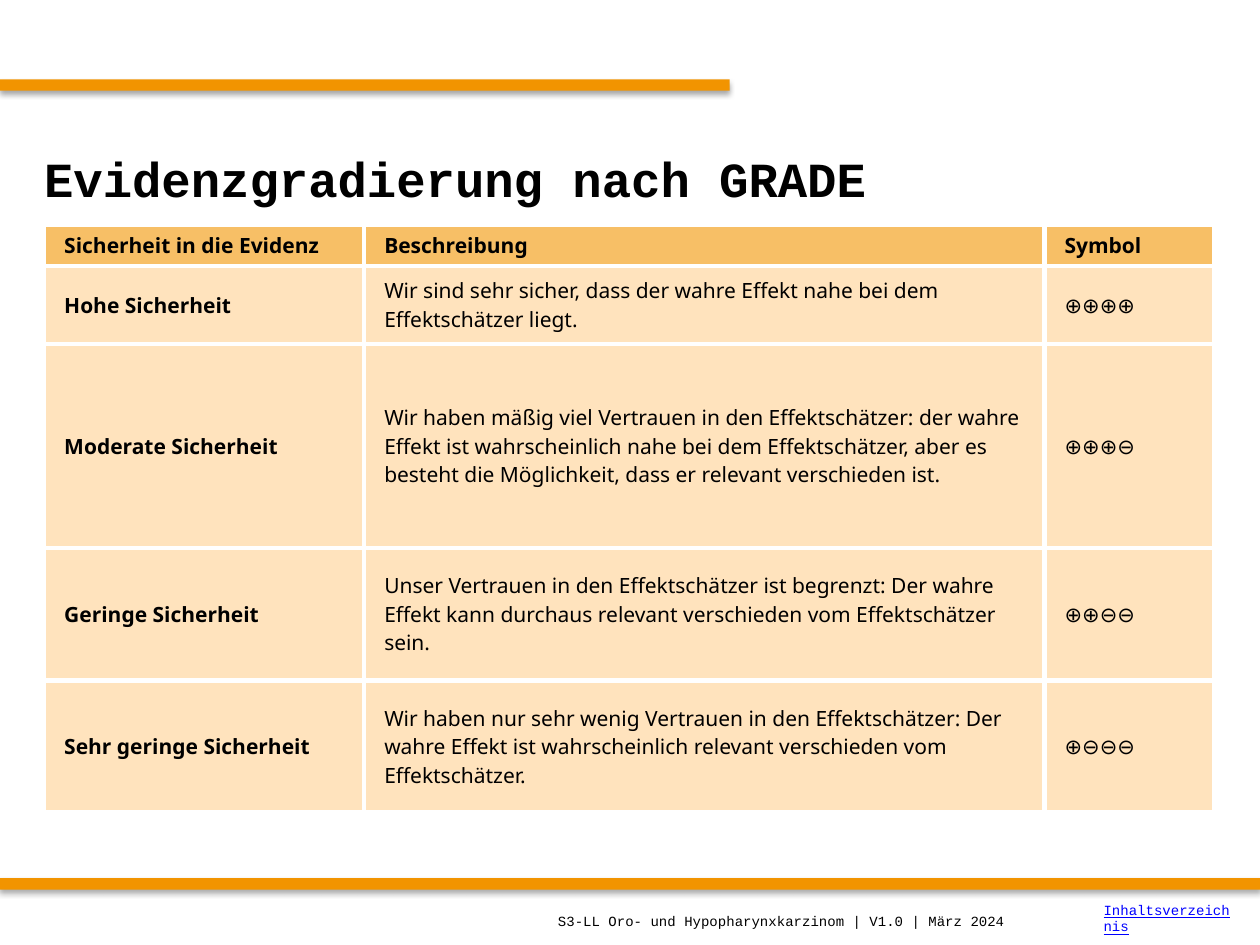
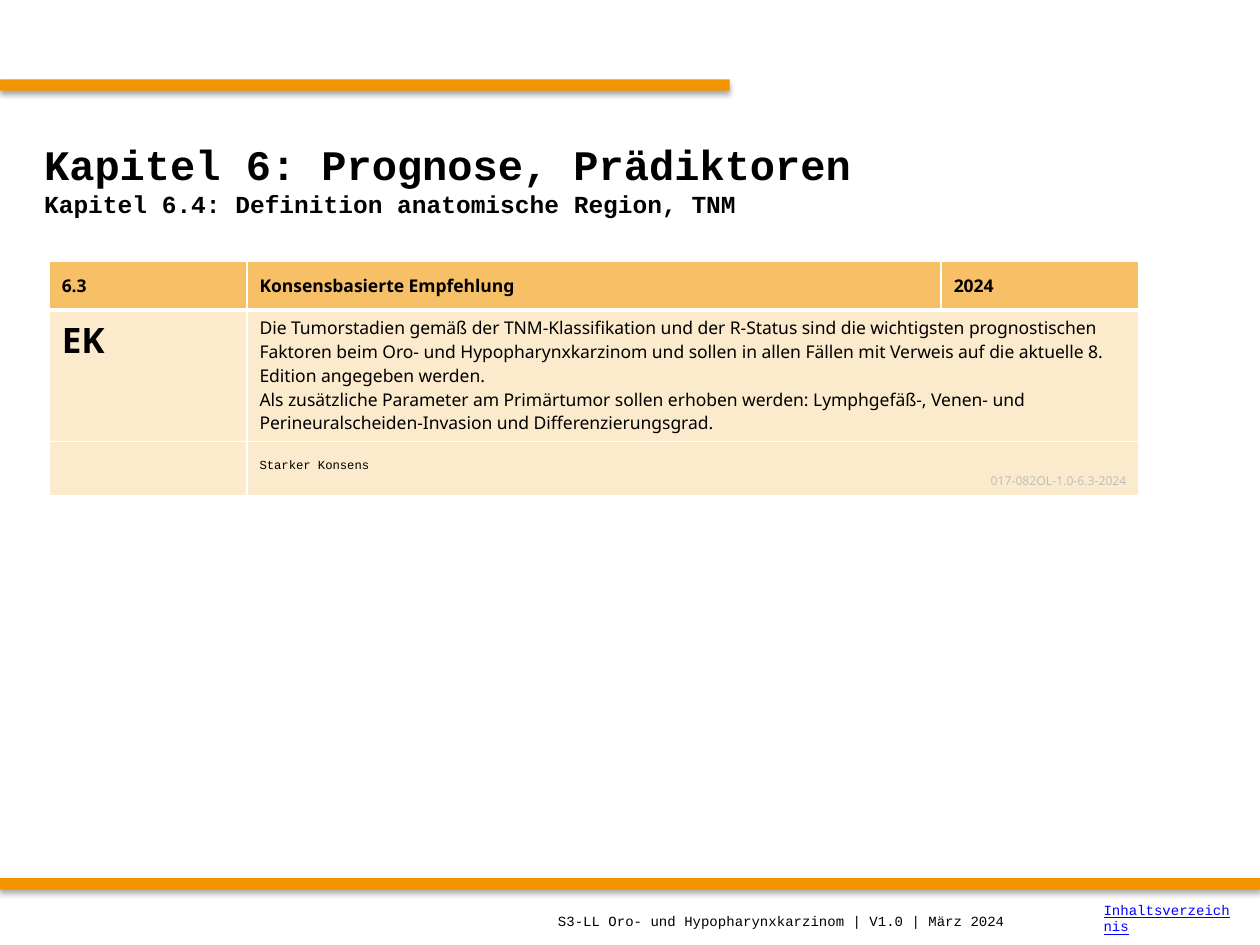
"""Build two guideline slides: evidence grading and a consensus recommendation."""
from dataclasses import dataclass

import lxml.etree
import pptx
import pptx.dml.color
import pptx.enum.shapes
import pptx.enum.text
import pptx.oxml
import pptx.oxml.ns
import pptx.util

Inches = pptx.util.Inches
Anchor = pptx.enum.text.MSO_ANCHOR
Align = pptx.enum.text.PP_ALIGN


@dataclass(frozen=True)
class Theme:
    orange: str = "F29400"
    header: str = "F7BF66"
    grade_body: str = "FFE3BD"
    consensus_body: str = "FCEACC"
    ink: str = "000000"
    link: str = "0000FF"
    faint: str = "BFBFBF"
    white: str = "FFFFFF"
    mono: str = "Courier New"
    sans: str = "Noto Sans"
    title: int = 28
    chapter: int = 24
    section: int = 14
    grade: int = 12
    mark: int = 20
    body: int = 10
    footer: int = 8
    note: int = 7


THEME = Theme()
WIDTH, HEIGHT = 10, 7.5
BANDS = [(0, 0.63, 5.79, 0.09), (0, 6.97, WIDTH, 0.09)]
TITLE_BOX = (0.25, 0.83, 9.5, 1.17)
FOOTERS = [
    ("S3-LL Oro- und Hypopharynxkarzinom | V1.0 | März 2024", (4.33, 7.11, 5.51, 0.39), {}),
    ("Inhaltsverzeichnis", (8.66, 7.09, 1.22, 0.39), {"color": THEME.link, "underline": True}),
]

GRADE_TITLE = [("Evidenzgradierung nach GRADE", THEME.title)]
GRADE_COLUMNS = [2.54, 5.4, 1.35]
GRADE_HEIGHTS = [0.33, 0.62, 1.62, 1.05, 1.05]
GRADE_ROWS = [
    ("Sicherheit in die Evidenz", "Beschreibung", "Symbol"),
    ("Hohe Sicherheit",
     "Wir sind sehr sicher, dass der wahre Effekt nahe bei dem Effektschätzer liegt.",
     "⊕⊕⊕⊕"),
    ("Moderate Sicherheit",
     "Wir haben mäßig viel Vertrauen in den Effektschätzer: der wahre Effekt ist "
     "wahrscheinlich nahe bei dem Effektschätzer, aber es besteht die Möglichkeit, "
     "dass er relevant verschieden ist.",
     "⊕⊕⊕⊖"),
    ("Geringe Sicherheit",
     "Unser Vertrauen in den Effektschätzer ist begrenzt: Der wahre Effekt kann "
     "durchaus relevant verschieden vom Effektschätzer sein.",
     "⊕⊕⊖⊖"),
    ("Sehr geringe Sicherheit",
     "Wir haben nur sehr wenig Vertrauen in den Effektschätzer: Der wahre Effekt ist "
     "wahrscheinlich relevant verschieden vom Effektschätzer.",
     "⊕⊖⊖⊖"),
]

CHAPTER_TITLE = [
    ("Kapitel 6: Prognose, Prädiktoren", THEME.chapter),
    ("Kapitel 6.4: Definition anatomische Region, TNM", THEME.section),
]
CONSENSUS_COLUMNS = [1.57, 5.51, 1.57]
CONSENSUS_HEIGHTS = [0.39, 1.04, 0.43]
CONSENSUS_HEADER = ["6.3", "Konsensbasierte Empfehlung", "2024"]
CONSENSUS_MARK = "EK"
RECOMMENDATION = [
    "Die Tumorstadien gemäß der TNM-Klassifikation und der R-Status sind die wichtigsten "
    "prognostischen Faktoren beim Oro- und Hypopharynxkarzinom und sollen in allen Fällen "
    "mit Verweis auf die aktuelle 8. Edition angegeben werden.",
    "Als zusätzliche Parameter am Primärtumor sollen erhoben werden: Lymphgefäß-, Venen- "
    "und Perineuralscheiden-Invasion und Differenzierungsgrad.",
]
CONSENSUS_STRENGTH = "Starker Konsens"
CONSENSUS_CODE = "017-082OL-1.0-6.3-2024"


def rgb(color):
    return pptx.dml.color.RGBColor.from_string(color)


def add_text(frame, text, size, font=THEME.sans, color=THEME.ink, bold=False,
             underline=False, align=Align.LEFT):
    paragraph = frame.paragraphs[0] if not frame.text else frame.add_paragraph()
    paragraph.alignment = align
    run = paragraph.add_run()
    run.text = text
    run.font.size = pptx.util.Pt(size)
    run.font.name = font
    run.font.bold = bold
    run.font.underline = underline
    run.font.color.rgb = rgb(color)


def add_band(slide, layout, box):
    band = slide.shapes.add_shape(
        pptx.enum.shapes.MSO_SHAPE.RECTANGLE, *map(Inches, box))
    band.fill.solid()
    band.fill.fore_color.rgb = rgb(THEME.orange)
    band.line.fill.background()
    band.shadow.inherit = False
    effects = band.element.spPr.find(pptx.oxml.ns.qn("a:effectLst"))
    shadow = lxml.etree.SubElement(
        effects, pptx.oxml.ns.qn("a:outerShdw"),
        blurRad="39370", dist="22860", dir="5400000", rotWithShape="0")
    color = lxml.etree.SubElement(shadow, pptx.oxml.ns.qn("a:srgbClr"), val=THEME.ink)
    lxml.etree.SubElement(color, pptx.oxml.ns.qn("a:alpha"), val="35000")
    layout.shapes.element.append(band.element)


def add_slide(presentation, layout, title_lines):
    slide = presentation.slides.add_slide(layout)
    title = slide.shapes.title
    title.left, title.top, title.width, title.height = map(Inches, TITLE_BOX)
    title.text_frame.auto_size = pptx.enum.text.MSO_AUTO_SIZE.NONE
    title.text_frame.vertical_anchor = Anchor.MIDDLE
    for text, size in title_lines:
        add_text(title.text_frame, text, size, font=THEME.mono, bold=True)
    return slide


def add_footers(slide):
    for text, box, style in FOOTERS:
        frame = slide.shapes.add_textbox(*map(Inches, box)).text_frame
        frame.word_wrap = True
        frame.vertical_anchor = Anchor.MIDDLE
        add_text(frame, text, THEME.footer, font=THEME.mono, **style)


def set_borders(cell, widths):
    properties = cell._tc.get_or_add_tcPr()
    for index, (side, width) in enumerate(zip("LRTB", widths)):
        line = lxml.etree.Element(
            pptx.oxml.ns.qn(f"a:ln{side}"), w=str(pptx.util.Pt(width)))
        fill = lxml.etree.SubElement(line, pptx.oxml.ns.qn("a:solidFill"))
        lxml.etree.SubElement(fill, pptx.oxml.ns.qn("a:srgbClr"), val=THEME.white)
        properties.insert(index, line)


def add_table(slide, left, top, columns, heights, body_fill, rule, header_rule):
    table = slide.shapes.add_table(
        len(heights), len(columns), Inches(left), Inches(top),
        Inches(sum(columns)), Inches(sum(heights))).table
    table.horz_banding = table.first_row = False
    for column, width in zip(table.columns, columns):
        column.width = Inches(width)
    for index, (row, height) in enumerate(zip(table.rows, heights)):
        row.height = Inches(height)
        for cell in row.cells:
            cell.fill.solid()
            cell.fill.fore_color.rgb = rgb(body_fill if index else THEME.header)
            above = header_rule if index == 1 else rule
            below = header_rule if index == 0 else rule
            set_borders(cell, (rule, rule, above, below))
    return table


def fill_grades(slide):
    table = add_table(slide, 0.35, 1.78, GRADE_COLUMNS, GRADE_HEIGHTS,
                      THEME.grade_body, rule=3, header_rule=3)
    for row, texts in enumerate(GRADE_ROWS):
        for column, text in enumerate(texts):
            cell = table.cell(row, column)
            cell.vertical_anchor = Anchor.MIDDLE
            cell.margin_left, cell.margin_right = Inches(0.16), Inches(0.05)
            cell.margin_top = cell.margin_bottom = Inches(0.02)
            add_text(cell.text_frame, text, THEME.grade, bold=row == 0 or column == 0)


def fill_consensus(slide):
    table = add_table(slide, 0.39, 2.07, CONSENSUS_COLUMNS, CONSENSUS_HEIGHTS,
                      THEME.consensus_body, rule=1, header_rule=3)
    for row in (1, 2):
        table.cell(row, 1).merge(table.cell(row, 2))
    for column, text in enumerate(CONSENSUS_HEADER):
        cell = table.cell(0, column)
        cell.vertical_anchor = Anchor.MIDDLE
        add_text(cell.text_frame, text, THEME.body, bold=True)
    add_text(table.cell(1, 0).text_frame, CONSENSUS_MARK, THEME.mark, bold=True)
    for text in RECOMMENDATION:
        add_text(table.cell(1, 1).text_frame, text, THEME.body)
    strength = table.cell(2, 1)
    strength.vertical_anchor = Anchor.BOTTOM
    add_text(strength.text_frame, CONSENSUS_STRENGTH, THEME.note, font=THEME.mono)
    add_text(strength.text_frame, CONSENSUS_CODE, THEME.note,
             color=THEME.faint, align=Align.RIGHT)


def main():
    presentation = pptx.Presentation()
    presentation.slide_width, presentation.slide_height = Inches(WIDTH), Inches(HEIGHT)
    layout = presentation.slide_layouts[5]
    grades = add_slide(presentation, layout, GRADE_TITLE)
    for box in BANDS:
        add_band(grades, layout, box)
    fill_grades(grades)
    add_footers(grades)
    consensus = add_slide(presentation, layout, CHAPTER_TITLE)
    fill_consensus(consensus)
    add_footers(consensus)
    presentation.save("out.pptx")


if __name__ == "__main__":
    main()
